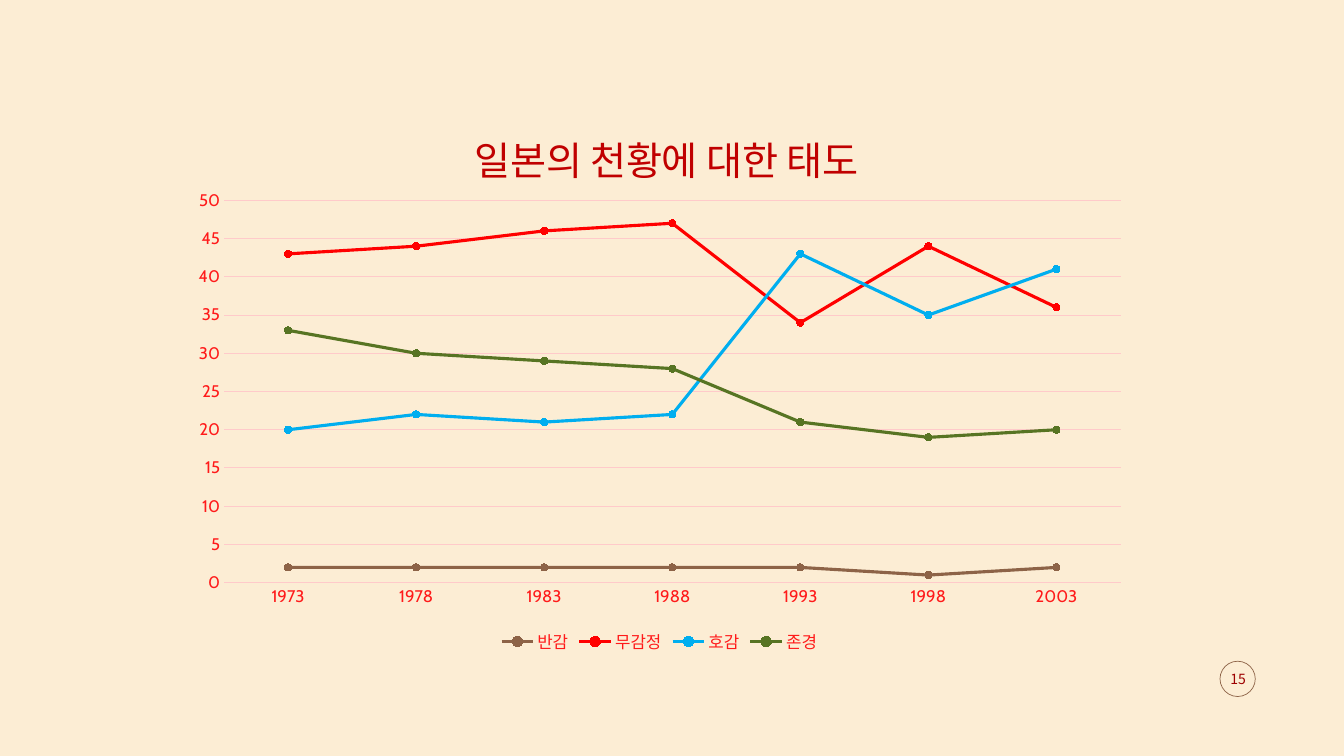
from lxml import etree
from pptx import Presentation
from pptx.chart.data import CategoryChartData
from pptx.dml.color import RGBColor
from pptx.enum.chart import XL_CHART_TYPE, XL_LEGEND_POSITION, XL_MARKER_STYLE, XL_TICK_MARK
from pptx.enum.shapes import MSO_SHAPE
from pptx.enum.text import MSO_ANCHOR, PP_ALIGN
from pptx.oxml import parse_xml
from pptx.oxml.ns import nsdecls, qn
from pptx.util import Inches, Pt

CREAM = RGBColor(0xFC, 0xED, 0xD4)
BROWN = RGBColor(0x8D, 0x63, 0x47)
RED = RGBColor(0xFF, 0x00, 0x00)
BLUE = RGBColor(0x00, 0xAE, 0xEF)
GREEN = RGBColor(0x57, 0x74, 0x23)
TITLE_RED = RGBColor(0xC0, 0x00, 0x00)
LABEL_RED = RGBColor(0xFF, 0x1A, 0x1A)
DARK_RED = RGBColor(0x9D, 0x00, 0x00)
PINK = RGBColor(0xFF, 0xCA, 0xCA)

LATIN_FONT = "Cabin"
KOREAN_FONT = "Noto Sans CJK KR"

YEARS = ["1973", "1978", "1983", "1988", "1993", "1998", "2003"]
ATTITUDES = [
    ("반감", BROWN, (2, 2, 2, 2, 2, 1, 2)),
    ("무감정", RED, (43, 44, 46, 47, 34, 44, 36)),
    ("호감", BLUE, (20, 22, 21, 22, 43, 35, 41)),
    ("존경", GREEN, (33, 30, 29, 28, 21, 19, 20)),
]


def set_font(font, size, color, name=LATIN_FONT):
    font.size = Pt(size)
    font.name = name
    font.bold = False
    font.color.rgb = color


def set_line(line, color, width):
    line.color.rgb = color
    line.width = Pt(width)


def manual_layout(inner=False, **shares):
    """Layout element; shares of the chart's size given as x, y, w, h."""
    layout = parse_xml(f"<c:layout {nsdecls('c')}><c:manualLayout/></c:layout>")
    settings = [("layoutTarget", "inner")] if inner else []
    settings += [("xMode", "edge"), ("yMode", "edge"), *shares.items()]
    for tag, value in settings:
        etree.SubElement(layout[0], qn(f"c:{tag}")).set("val", str(value))
    return layout


def add_title(chart, text):
    title = chart.chart_title
    title.include_in_layout = False
    title.text_frame.text = text
    paragraph = title.text_frame.paragraphs[0]
    set_font(paragraph.font, 28, TITLE_RED)
    title_xml = title._element
    for old_layout in title_xml.findall(qn("c:layout")):
        title_xml.remove(old_layout)
    title_xml.find(qn("c:tx")).addnext(manual_layout(x=0.3, y=0.04))


def style_axis(axis):
    axis.major_tick_mark = axis.minor_tick_mark = XL_TICK_MARK.NONE
    set_font(axis.tick_labels.font, 12, LABEL_RED)


def style_series(series, color):
    series.smooth = False
    set_line(series.format.line, color, 2.25)
    marker = series.marker
    marker.style = XL_MARKER_STYLE.CIRCLE
    marker.size = 5
    marker.format.fill.solid()
    marker.format.fill.fore_color.rgb = color
    marker.format.line.color.rgb = color


def add_attitude_chart(slide):
    chart_data = CategoryChartData()
    chart_data.categories = YEARS
    for name, _, values in ATTITUDES:
        chart_data.add_series(name, values)
    chart = slide.shapes.add_chart(
        XL_CHART_TYPE.LINE_MARKERS, Inches(1.78), Inches(0.95),
        Inches(9.52), Inches(5.58), chart_data).chart
    set_font(chart.font, 10, DARK_RED)
    add_title(chart, "일본의 천황에 대한 태도")

    # Axes and gridlines
    category_axis, value_axis = chart.category_axis, chart.value_axis
    for axis in (category_axis, value_axis):
        style_axis(axis)
    set_line(category_axis.format.line, PINK, 0.75)
    value_axis.format.line.fill.background()
    value_axis.minimum_scale, value_axis.maximum_scale = 0, 50
    value_axis.major_unit = 5
    set_line(value_axis.major_gridlines.format.line, PINK, 0.75)

    # Lines, legend and plot area
    plot = chart.plots[0]
    plot.vary_by_categories = False
    for series, (_, color, _) in zip(plot.series, ATTITUDES):
        style_series(series, color)
    chart.has_legend = True
    chart.legend.position = XL_LEGEND_POSITION.BOTTOM
    chart.legend.include_in_layout = False
    set_font(chart.legend.font, 12, LABEL_RED)
    plot_area = chart._chartSpace.chart.plotArea
    for old_layout in plot_area.findall(qn("c:layout")):
        plot_area.remove(old_layout)
    plot_area.insert(0, manual_layout(inner=True, x=0.0465, y=0.186, w=0.934, h=0.68))


def add_page_number(slide, number):
    circle = slide.shapes.add_shape(
        MSO_SHAPE.OVAL, Inches(12.1), Inches(6.56), Inches(0.35), Inches(0.35))
    circle.shadow.inherit = False
    circle.fill.background()
    set_line(circle.line, BROWN, 0.5)

    box = slide.shapes.add_textbox(Inches(12.08), Inches(6.54), Inches(0.4), Inches(0.4))
    frame = box.text_frame
    frame.word_wrap = True
    frame.vertical_anchor = MSO_ANCHOR.MIDDLE
    frame.margin_left = frame.margin_right = frame.margin_top = frame.margin_bottom = 0
    paragraph = frame.paragraphs[0]
    paragraph.text = number
    paragraph.alignment = PP_ALIGN.CENTER
    set_font(paragraph.font, 10, DARK_RED, KOREAN_FONT)


def main():
    presentation = Presentation()
    presentation.slide_width = Inches(13.33)
    presentation.slide_height = Inches(7.5)
    slide = presentation.slides.add_slide(presentation.slide_layouts[6])
    slide.background.fill.solid()
    slide.background.fill.fore_color.rgb = CREAM
    add_page_number(slide, "15")
    add_attitude_chart(slide)
    presentation.save("out.pptx")


if __name__ == "__main__":
    main()
